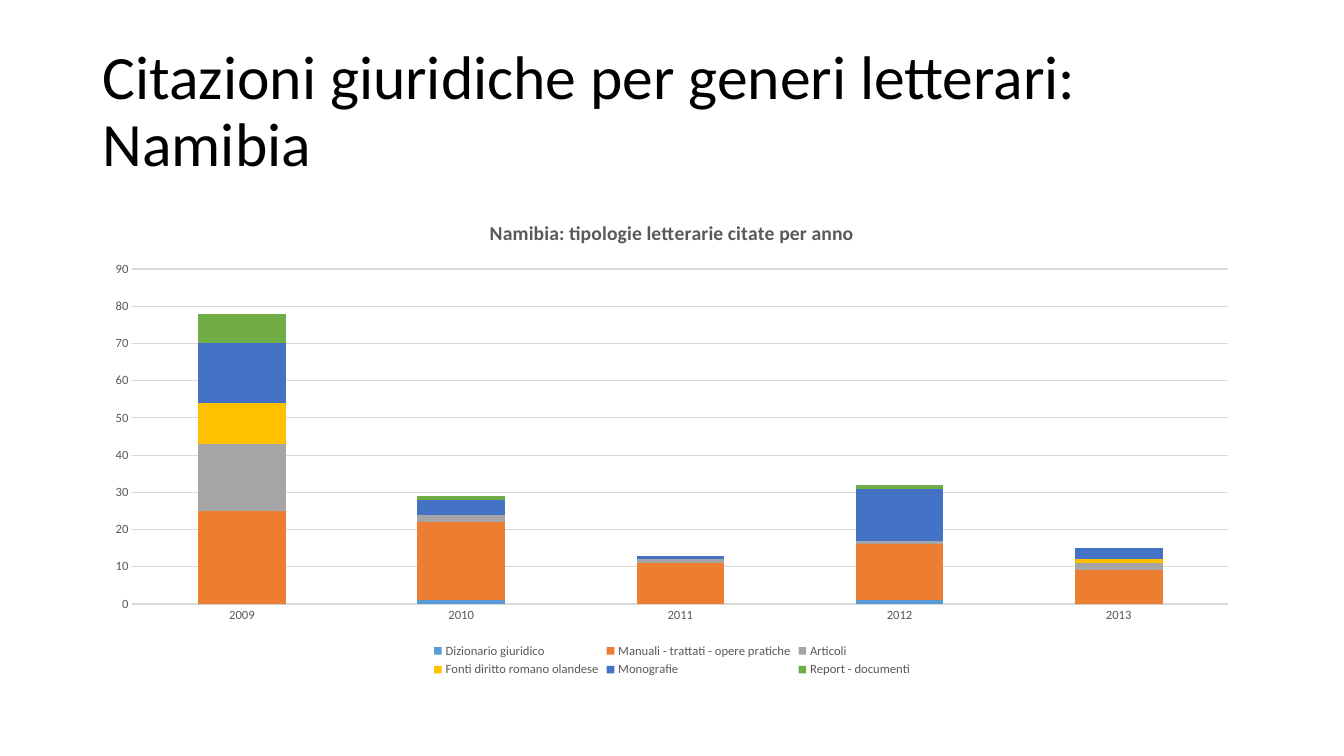
import dataclasses

import pptx
import pptx.chart.data
import pptx.dml.color
import pptx.enum.chart
import pptx.enum.text
import pptx.util
from pptx.util import Cm, Pt

FONT = "Calibri"
GREY = "595959"
GRID = "D9D9D9"
YEARS = ("2009", "2010", "2011", "2012", "2013")


@dataclasses.dataclass(frozen=True)
class Genre:
    name: str
    citations: tuple[int | None, ...]
    color: str


GENRES = (
    Genre("Dizionario giuridico", (0, 1, None, 1, 0), "5B9BD5"),
    Genre("Manuali - trattati - opere pratiche", (25, 21, 11, 15, 9), "ED7D31"),
    Genre("Articoli", (18, 2, 1, 1, 2), "A5A5A5"),
    Genre("Fonti diritto romano olandese", (11, 0, 0, 0, 1), "FFC000"),
    Genre("Monografie", (16, 4, 1, 14, 3), "4472C4"),
    Genre("Report - documenti", (8, 1, None, 1, 0), "70AD47"),
)


def rgb(color: str) -> pptx.dml.color.RGBColor:
    return pptx.dml.color.RGBColor.from_string(color)


def style_font(font, size: float, color: str, bold: bool = False) -> None:
    font.name = FONT
    font.size = Pt(size)
    font.bold = bold
    font.color.rgb = rgb(color)


def style_line(line, color: str) -> None:
    line.color.rgb = rgb(color)
    line.width = Pt(0.75)


def fill_title(box) -> None:
    box.left, box.top, box.width, box.height = Cm(2.33), Cm(1.01), Cm(29.21), Cm(3.68)
    frame = box.text_frame
    frame.word_wrap = True
    frame.auto_size = pptx.enum.text.MSO_AUTO_SIZE.NONE
    frame.vertical_anchor = pptx.enum.text.MSO_ANCHOR.MIDDLE
    para = frame.paragraphs[0]
    para.alignment = pptx.enum.text.PP_ALIGN.LEFT
    para.line_spacing = 0.9
    for index, text in enumerate(("Citazioni giuridiche per generi letterari:", "Namibia")):
        if index:
            para.add_line_break()
        span = para.add_run()
        span.text = text
        style_font(span.font, 44, "000000")


def style_axes(chart) -> None:
    for axis in (chart.category_axis, chart.value_axis):
        axis.major_tick_mark = pptx.enum.chart.XL_TICK_MARK.NONE
        axis.minor_tick_mark = pptx.enum.chart.XL_TICK_MARK.NONE
        style_font(axis.tick_labels.font, 9, GREY)
    style_line(chart.category_axis.format.line, GRID)
    values = chart.value_axis
    values.format.line.fill.background()
    values.has_major_gridlines = True
    style_line(values.major_gridlines.format.line, GRID)
    values.minimum_scale, values.maximum_scale, values.major_unit = 0, 90, 10


def add_citation_chart(page) -> None:
    data = pptx.chart.data.CategoryChartData()
    data.categories = YEARS
    for genre in GENRES:
        data.add_series(genre.name, genre.citations)
    chart = page.shapes.add_chart(
        pptx.enum.chart.XL_CHART_TYPE.COLUMN_STACKED,
        Cm(2.33), Cm(5.07), Cm(29.21), Cm(12.09), data,
    ).chart
    style_font(chart.font, 10, "000000")

    chart.has_title = True
    span = chart.chart_title.text_frame.paragraphs[0].add_run()
    span.text = "Namibia: tipologie letterarie citate per anno"
    style_font(span.font, 14, GREY, bold=True)
    chart.chart_title.include_in_layout = False

    chart.has_legend = True
    chart.legend.position = pptx.enum.chart.XL_LEGEND_POSITION.BOTTOM
    chart.legend.include_in_layout = False
    style_font(chart.legend.font, 9, GREY)

    style_axes(chart)
    plot = chart.plots[0]
    plot.gap_width = 150
    plot.overlap = 100
    plot.vary_by_categories = False
    for series, genre in zip(plot.series, GENRES):
        series.format.fill.solid()
        series.format.fill.fore_color.rgb = rgb(genre.color)
        series.invert_if_negative = False


def main() -> None:
    deck = pptx.Presentation()
    deck.slide_width, deck.slide_height = Cm(33.87), Cm(19.05)
    page = deck.slides.add_slide(deck.slide_layouts.get_by_name("Title Only"))
    fill_title(page.shapes.title)
    add_citation_chart(page)
    deck.save("out.pptx")


if __name__ == "__main__":
    main()
